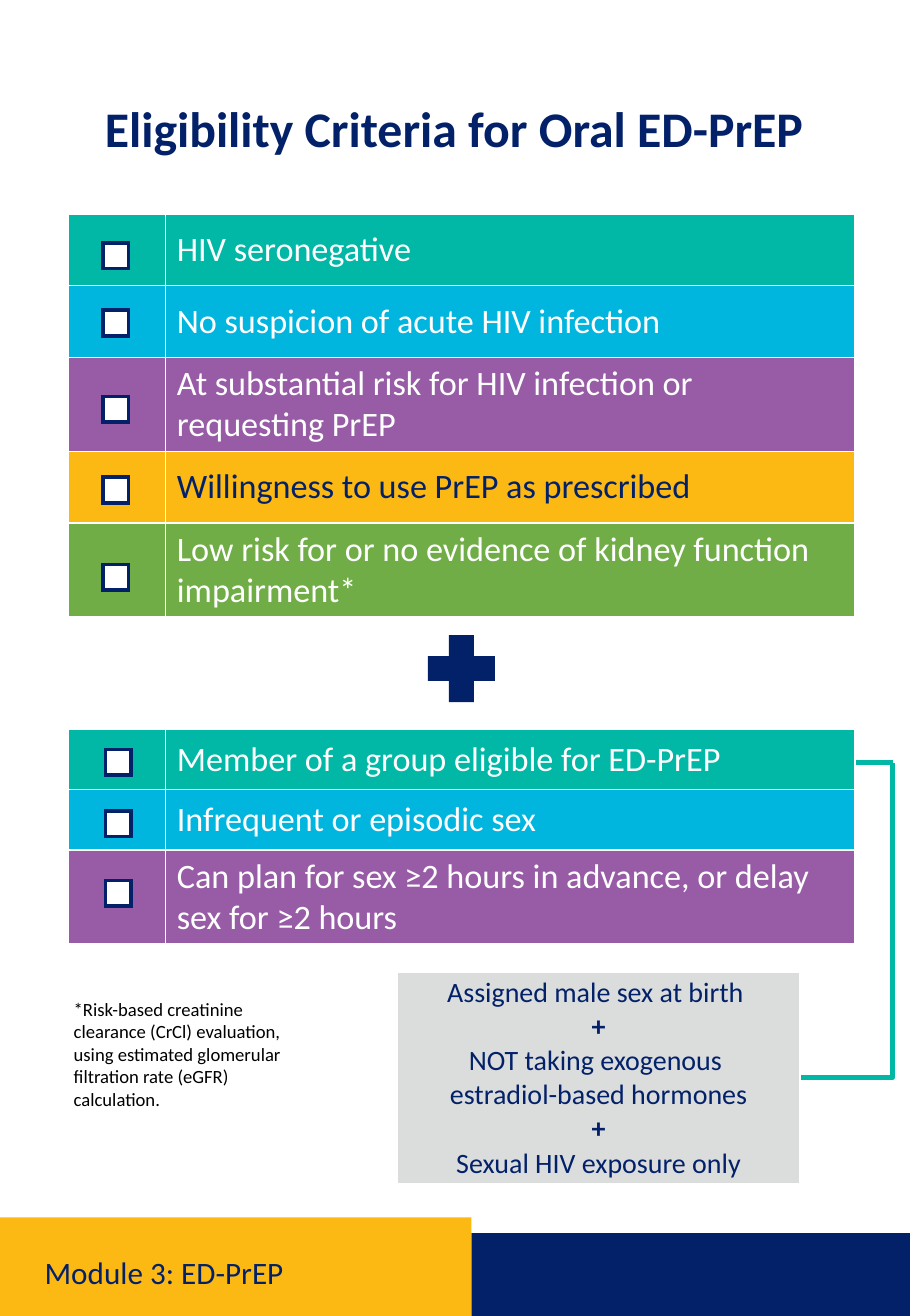
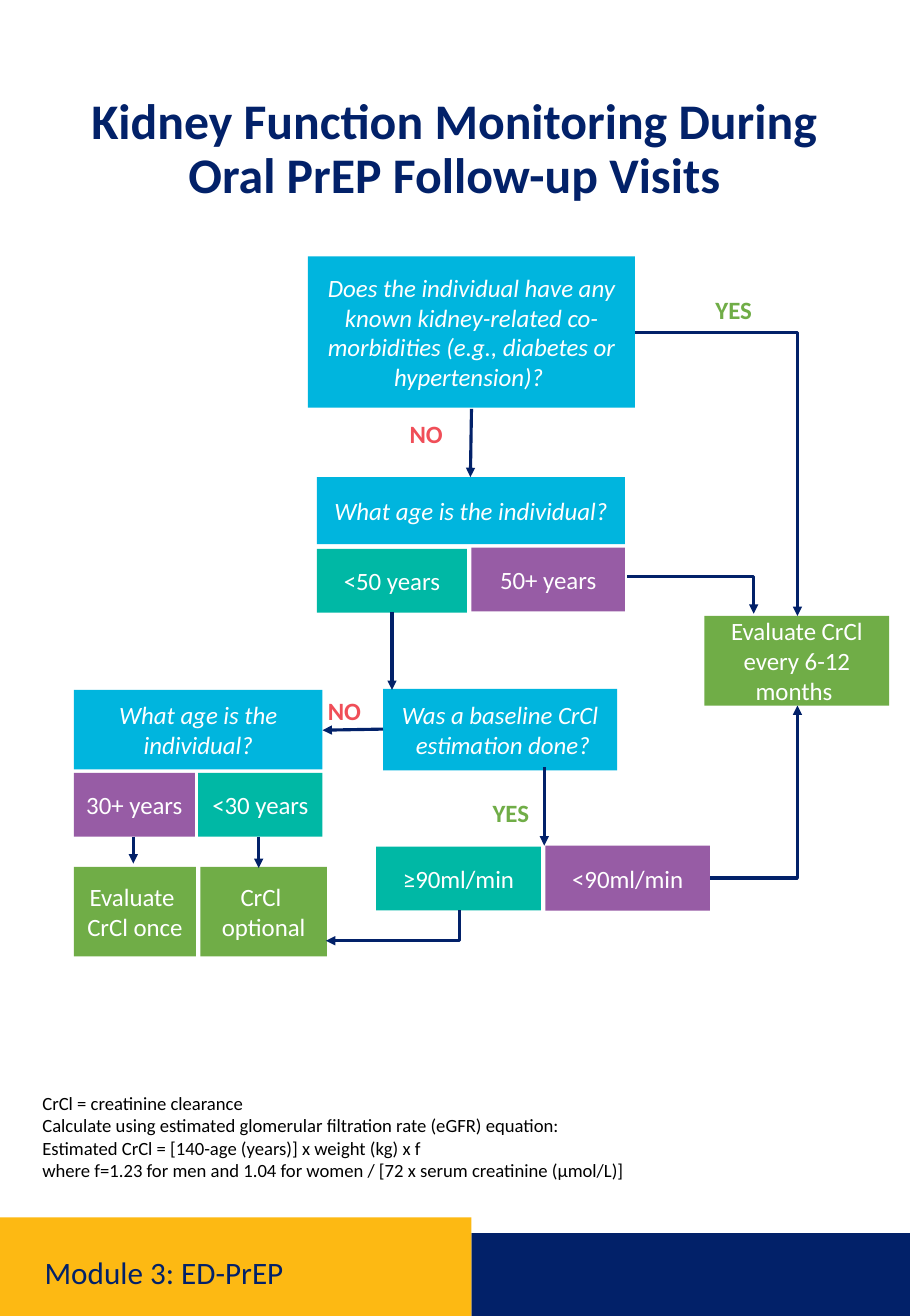
from dataclasses import dataclass, replace

from lxml.etree import SubElement
from pptx import Presentation
from pptx.dml.color import RGBColor
from pptx.enum.shapes import MSO_CONNECTOR, MSO_SHAPE
from pptx.enum.text import MSO_ANCHOR, PP_ALIGN
from pptx.oxml.ns import qn
from pptx.shapes.autoshape import Shape
from pptx.slide import Slide
from pptx.text.text import TextFrame
from pptx.util import Inches, Pt

# Shared look
NAVY, GOLD, WHITE, BLACK = "022169", "FDB913", "FFFFFF", "000000"
TEAL, BLUE, PLUM, GREEN = "00B8A5", "00B5DE", "975CA5", "70AD47"
RED, GREY = "F04E58", "DBDCDC"
FONT = "Calibri"
WIDE, HIGH = 65 / 8, 11.75


@dataclass(frozen=True)
class Style:
    size: float
    color: str
    bold: bool = False
    slant: bool = False
    align: PP_ALIGN = PP_ALIGN.LEFT
    lead: float = 1.0


@dataclass(frozen=True)
class Area:
    x: float
    y: float
    w: float
    h: float

    def emu(self) -> list[int]:
        return [Inches(v) for v in (self.x, self.y, self.w, self.h)]


@dataclass(frozen=True)
class Row:
    text: str
    fill: str
    high: float
    color: str = WHITE


@dataclass(frozen=True)
class Box:
    area: Area
    fill: str
    text: str
    slant: bool = False


@dataclass(frozen=True)
class Arrow:
    x1: float
    y1: float
    x2: float
    y2: float
    bent: bool = False
    end: str = "tailEnd"


TITLE = Style(32, NAVY, bold=True, align=PP_ALIGN.CENTER, lead=0.9)
FOOT = Style(20, NAVY, lead=0.9)
NOTE = Style(12, BLACK)
ITEM = Style(22, WHITE)
GROUP = Style(18, NAVY, align=PP_ALIGN.CENTER)
NODE = Style(16, WHITE, align=PP_ALIGN.CENTER)


def rgb(code: str) -> RGBColor:
    return RGBColor.from_string(code)


# Text
def write(frame: TextFrame, lines: list[tuple[str, Style]]) -> None:
    frame.word_wrap = True
    for i, (text, style) in enumerate(lines):
        para = frame.add_paragraph() if i else frame.paragraphs[0]
        para.alignment = style.align
        para.line_spacing = style.lead
        for j, part in enumerate(text.split("\n")):
            if j:
                para.add_line_break()
            run = para.add_run()
            run.text = part
            font = run.font
            font.name, font.size = FONT, Pt(style.size)
            font.bold, font.italic = style.bold, style.slant
            font.color.rgb = rgb(style.color)


def label(slide: Slide, area: Area, style: Style, *lines: str) -> TextFrame:
    frame = slide.shapes.add_textbox(*area.emu()).text_frame
    write(frame, [(line, style) for line in lines])
    return frame


# Shapes and lines
def block(slide: Slide, area: Area, fill: str, edge: str = "",
          kind: MSO_SHAPE = MSO_SHAPE.RECTANGLE) -> Shape:
    shape = slide.shapes.add_shape(kind, *area.emu())
    shape.shadow.inherit = False
    shape.fill.solid()
    shape.fill.fore_color.rgb = rgb(fill)
    if edge:
        shape.line.color.rgb = rgb(edge)
        shape.line.width = Pt(2.25)
        SubElement(shape.line._get_or_add_ln(), qn("a:miter"), lim="800000")
    else:
        shape.line.fill.background()
    return shape


def link(slide: Slide, way: Arrow, color: str = NAVY, width: float = 2) -> None:
    kind = MSO_CONNECTOR.ELBOW if way.bent else MSO_CONNECTOR.STRAIGHT
    ends = [Inches(v) for v in (way.x1, way.y1, way.x2, way.y2)]
    line = slide.shapes.add_connector(kind, *ends)
    line.line.color.rgb = rgb(color)
    line.line.width = Pt(width)
    props = line._element.spPr
    if way.bent:
        props.find(qn("a:prstGeom")).set("prst", "bentConnector2")
    if way.end:
        SubElement(props.find(qn("a:ln")), qn(f"a:{way.end}"), type="triangle")
    SubElement(props, qn("a:effectLst"))


# Tables
def paint(cell, fill: str, top: float = 1) -> None:
    props = cell._tc.get_or_add_tcPr()
    for side in ("L", "R", "T", "B"):
        width = Pt(top if side == "T" else 1)
        edge = SubElement(props, qn(f"a:ln{side}"), w=str(width))
        solid = SubElement(edge, qn("a:solidFill"))
        SubElement(solid, qn("a:srgbClr"), val=WHITE)
    cell.fill.solid()
    cell.fill.fore_color.rgb = rgb(fill)


def grid(slide: Slide, x: float, y: float, cols: list[float],
         highs: list[float]):
    area = Area(x, y, sum(cols), sum(highs))
    table = slide.shapes.add_table(len(highs), len(cols), *area.emu()).table
    table.first_row = table.horz_banding = False
    for col, wide in zip(table.columns, cols):
        col.width = Inches(wide)
    for row, high in zip(table.rows, highs):
        row.height = Inches(high)
    return table


def checks(slide: Slide, y: float, rows: list[Row], x: float,
           tops: list[float]) -> None:
    table = grid(slide, 0.61, y, [0.87, 6.15], [row.high for row in rows])
    for i, row in enumerate(rows):
        for j in range(2):
            paint(table.cell(i, j), row.fill)
        cell = table.cell(i, 1)
        cell.vertical_anchor = MSO_ANCHOR.MIDDLE
        write(cell.text_frame, [(row.text, replace(ITEM, color=row.color))])
    for top in tops:
        block(slide, Area(x, top, 0.23, 0.23), WHITE, NAVY)


# Frame of each slide
def start(deck, title: str, area: Area) -> Slide:
    slide = deck.slides.add_slide(deck.slide_layouts[6])
    for x, y, right, fill in ((4.21, 11.01, WIDE, NAVY), (0, 10.87, 4.21, GOLD)):
        block(slide, Area(x, y, right - x, HIGH - y), fill)
    label(slide, area, TITLE, title)
    foot = label(slide, Area(0.3, 11.13, 3.59, 0.5), FOOT, "Module 3: ED-PrEP")
    foot.vertical_anchor = MSO_ANCHOR.MIDDLE
    return slide


def criteria(deck) -> None:
    slide = start(deck, "Eligibility Criteria for Oral ED-PrEP",
                  Area(0.61, 0.88, 6.9, 0.81))
    checks(slide, 1.91, [
        Row("HIV seronegative", TEAL, 0.64),
        Row("No suspicion of acute HIV infection", BLUE, 0.64),
        Row("At substantial risk for HIV infection or requesting PrEP",
            PLUM, 0.84),
        Row("Willingness to use PrEP as prescribed", GOLD, 0.64, NAVY),
        Row("Low risk for or no evidence of kidney function impairment*",
            GREEN, 0.84),
    ], 0.92, [2.17, 2.77, 3.54, 4.26, 5.04])
    plus = block(slide, Area(3.82, 5.67, 0.6, 0.6), NAVY, kind=MSO_SHAPE.CROSS)
    plus.adjustments[0] = 0.315
    checks(slide, 6.51, [
        Row("Member of a group eligible for ED-PrEP ", TEAL, 0.54),
        Row("Infrequent or episodic sex", BLUE, 0.54),
        Row("Can plan for sex ≥2 hours in advance, or delay sex for ≥2 hours",
            PLUM, 0.84),
    ], 0.94, [6.69, 7.24, 7.86])

    # Who is in the group
    cell = grid(slide, 3.55, 8.67, [3.59], [1.9]).cell(0, 0)
    paint(cell, GREY, top=3)
    cell.margin_left = cell.margin_right = Inches(0.09)
    cell.margin_top = cell.margin_bottom = Inches(0.04)
    plus_row = ("+", replace(GROUP, bold=True))
    write(cell.text_frame, [
        ("Assigned male sex at birth ", GROUP), plus_row,
        ("NOT taking exogenous ", GROUP),
        ("estradiol-based hormones", GROUP), plus_row,
        ("Sexual HIV exposure only", GROUP),
    ])
    link(slide, Arrow(7.64, 6.81, 7.97, 6.81, end=""), TEAL, 3)
    link(slide, Arrow(7.15, 9.62, 7.97, 6.81, bent=True, end=""), TEAL, 3)
    label(slide, Area(0.56, 8.86, 2.24, 1.11), NOTE,
          "*Risk-based creatinine clearance (CrCl) evaluation, using estimated "
          "glomerular filtration rate (eGFR) calculation.")


def kidney(deck) -> None:
    slide = start(
        deck, "Kidney Function Monitoring During Oral PrEP Follow-up Visits",
        Area(0.61, 0.81, 6.9, 1.13))

    # Questions, answers and outcomes
    age = "What age is the individual?"
    for box in (
        Box(Area(2.75, 2.29, 2.92, 1.35), BLUE,
            "Does the individual have any known kidney-related co-morbidities "
            "(e.g., diabetes or hypertension)? ", True),
        Box(Area(2.83, 4.26, 2.75, 0.6), BLUE, age, True),
        Box(Area(2.83, 4.9, 1.34, 0.57), TEAL, "<50 years"),
        Box(Area(4.21, 4.89, 1.37, 0.57), PLUM, "50+ years"),
        Box(Area(6.29, 5.5, 1.65, 0.8), GREEN,
            "Evaluate CrCl every 6-12 months "),
        Box(Area(3.42, 6.15, 2.09, 0.73), BLUE,
            "Was a baseline CrCl\n estimation done?", True),
        Box(Area(3.36, 7.56, 1.47, 0.57), TEAL, "≥90ml/min"),
        Box(Area(4.87, 7.55, 1.47, 0.58), PLUM, "<90ml/min"),
        Box(Area(0.66, 6.16, 2.22, 0.71), BLUE, age, True),
        Box(Area(0.66, 6.9, 1.08, 0.57), PLUM, "30+ years"),
        Box(Area(1.77, 6.9, 1.11, 0.57), TEAL, "<30 years"),
        Box(Area(0.66, 7.74, 1.09, 0.8), GREEN, "Evaluate \nCrCl once"),
        Box(Area(1.79, 7.74, 1.13, 0.8), GREEN, "CrCl \noptional"),
    ):
        frame = block(slide, box.area, box.fill).text_frame
        frame.vertical_anchor = MSO_ANCHOR.MIDDLE
        style = replace(NODE, slant=box.slant)
        # Outcomes break into paragraphs, questions into lines
        parts = box.text.split("\n") if box.fill == GREEN else [box.text]
        write(frame, [(part, style) for part in parts])

    # Paths between them
    for way in (
        Arrow(4.21, 3.65, 4.2, 4.26),
        Arrow(3.5, 5.46, 3.5, 6.16),
        Arrow(4.86, 6.85, 4.86, 7.55),
        Arrow(3.42, 6.51, 2.88, 6.52),
        Arrow(1.19, 7.47, 1.19, 7.71),
        Arrow(2.31, 7.47, 2.31, 7.75),
        Arrow(5.67, 2.97, 7.12, 5.5, bent=True),
        Arrow(5.6, 5.15, 6.73, 5.48, bent=True),
        Arrow(6.34, 7.84, 7.12, 6.3, bent=True),
        Arrow(2.91, 8.4, 4.1, 8.13, bent=True, end="headEnd"),
    ):
        link(slide, way)
    for text, color, x, y in (
        ("NO", RED, 3.56, 3.69), ("YES", GREEN, 6.29, 2.58),
        ("NO", RED, 2.83, 6.16), ("YES", GREEN, 4.3, 7.07),
    ):
        label(slide, Area(x, y, 0.67, 0.37), Style(16, color, bold=True), text)

    label(slide, Area(0.28, 9.7, 5.75, 0.91), NOTE,
          "CrCl = creatinine clearance",
          "Calculate using estimated glomerular filtration rate (eGFR) equation:",
          "Estimated CrCl = [140-age (years)] x weight (kg) x f",
          "where f=1.23 for men and 1.04 for women / "
          "[72 x serum creatinine (μmol/L)]")


def main() -> None:
    deck = Presentation()
    deck.slide_width, deck.slide_height = Inches(WIDE), Inches(HIGH)
    criteria(deck)
    kidney(deck)
    deck.save("out.pptx")


if __name__ == "__main__":
    main()
